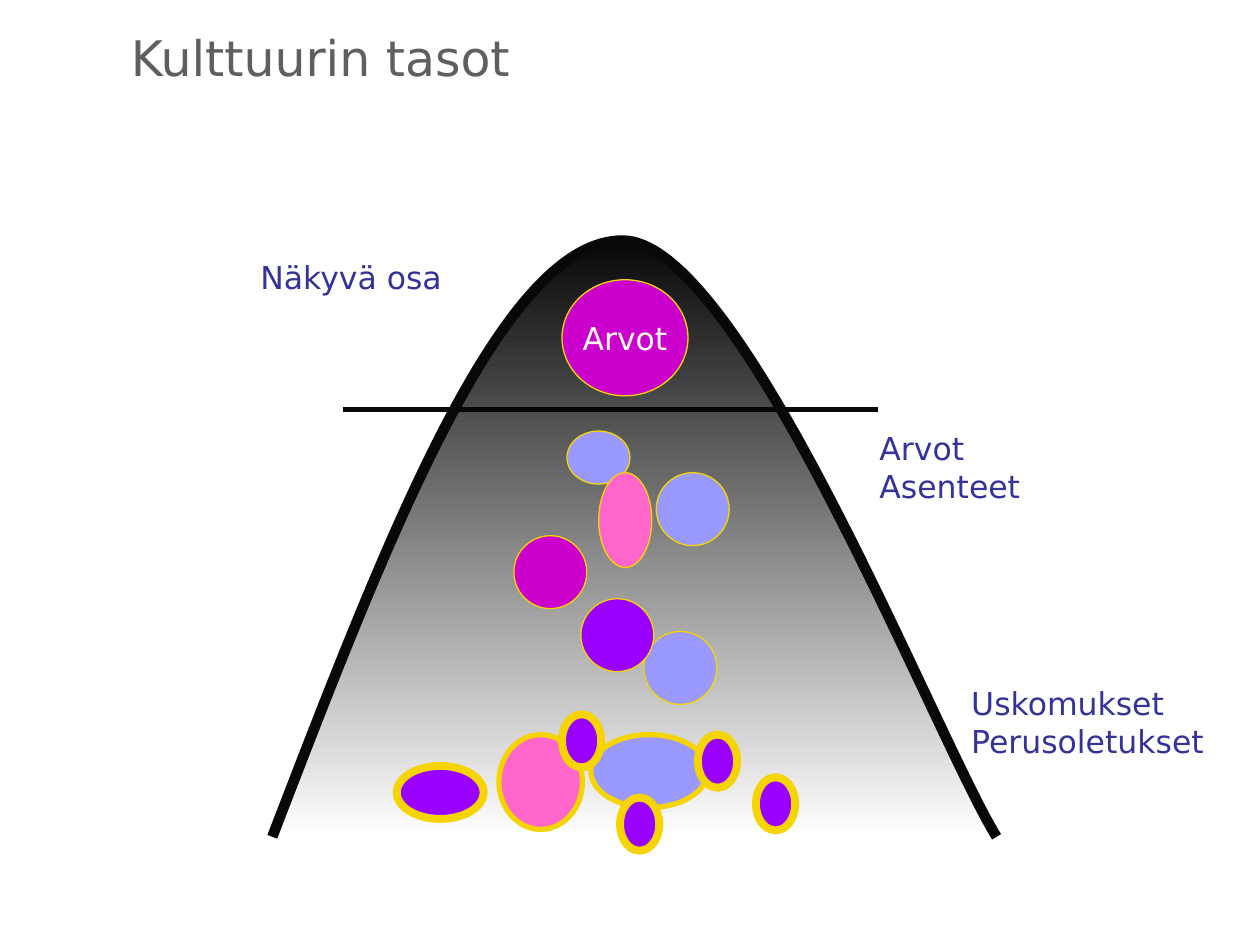
from dataclasses import dataclass
from typing import Any

from lxml.etree import SubElement
from pptx import Presentation
from pptx.dml.color import RGBColor
from pptx.enum.shapes import MSO_CONNECTOR, MSO_SHAPE
from pptx.enum.text import MSO_ANCHOR, PP_ALIGN
from pptx.oxml.ns import qn
from pptx.util import Cm, Pt


@dataclass(frozen=True)
class Theme:
    font: str = "DejaVu Sans"
    title: int = 28
    body: int = 18
    grey: str = "5F5F5F"
    navy: str = "333399"
    black: str = "080808"
    white: str = "FFFFFF"
    gold: str = "F5D400"
    blue: str = "9999FF"
    plum: str = "CC00CC"
    pink: str = "FF66CC"
    violet: str = "9900FF"
    thin: float = 0.75
    mid: float = 3
    thick: float = 4.5
    edge: float = 6


THEME = Theme()


@dataclass(frozen=True)
class Label:
    left: float
    top: float
    width: float
    height: float
    lines: tuple[str, ...]
    size: int = THEME.body
    color: str = THEME.navy
    wrap: bool = False


@dataclass(frozen=True)
class Oval:
    left: float
    top: float
    width: float
    height: float
    fill: str
    line: float = THEME.thin
    text: str = ""


def disc(left: float, top: float, fill: str) -> Oval:
    return Oval(left, top, 1.47, 1.47, fill)


def bead(left: float, top: float, width: float = 0.79) -> Oval:
    return Oval(left, top, width, 1.07, THEME.violet, THEME.thick)


LABELS = (
    Label(2.39, 0.43, 22.33, 3.18, ("Kulttuurin tasot",),
          THEME.title, THEME.grey, True),
    Label(5, 5.08, 4.93, 1.27, ("Näkyvä osa",)),
    Label(17.48, 8.53, 3.86, 2.29, ("Arvot", "Asenteet")),
    Label(19.33, 13.67, 6.63, 2.29, ("Uskomukset Perusoletukset",), wrap=True),
)

OVALS = (
    Oval(11.43, 8.69, 1.27, 1.07, THEME.blue),
    disc(10.36, 10.8, THEME.plum),
    disc(13.23, 9.53, THEME.blue),
    Oval(12.07, 9.53, 1.07, 1.91, THEME.pink),
    disc(12.98, 12.73, THEME.blue),
    disc(11.71, 12.07, THEME.violet),
    Oval(11.91, 14.81, 2.36, 1.47, THEME.blue, THEME.mid),
    Oval(10.06, 14.81, 1.68, 1.91, THEME.pink, THEME.mid),
    bead(15.24, 15.67),
    bead(11.33, 14.4),
    bead(12.5, 16.08),
    bead(14.07, 14.81),
    bead(8, 15.44, 1.75),
    Oval(11.33, 5.64, 2.54, 2.34, THEME.plum, text="Arvot"),
)

# Start point, then two handles and an end point for each curve
MOUND = (
    (5.49, 16.87),
    (7.8, 10.87), (10.11, 4.85), (12.55, 4.85),
    (14.96, 4.85), (18.85, 14.86), (20.09, 16.87),
)


def tint(color: str) -> RGBColor:
    return RGBColor.from_string(color)


def stroke(shape: Any, color: str, width: float) -> None:
    shape.line.color.rgb = tint(color)
    shape.line.width = Pt(width)


def style(para: Any, size: int, color: str) -> None:
    para.font.name = THEME.font
    para.font.size = Pt(size)
    para.font.color.rgb = tint(color)


def add_label(shapes: Any, label: Label) -> None:
    box = shapes.add_textbox(Cm(label.left), Cm(label.top),
                             Cm(label.width), Cm(label.height))
    frame = box.text_frame
    frame.word_wrap = label.wrap
    frame.text = "\n".join(label.lines)
    for para in frame.paragraphs:
        style(para, label.size, label.color)


def add_oval(shapes: Any, oval: Oval) -> None:
    shape = shapes.add_shape(MSO_SHAPE.OVAL, Cm(oval.left), Cm(oval.top),
                             Cm(oval.width), Cm(oval.height))
    shape.shadow.inherit = False
    shape.fill.solid()
    shape.fill.fore_color.rgb = tint(oval.fill)
    stroke(shape, THEME.gold, oval.line)
    if oval.text:
        frame = shape.text_frame
        frame.word_wrap = False
        frame.vertical_anchor = MSO_ANCHOR.MIDDLE
        frame.text = oval.text
        para = frame.paragraphs[0]
        para.alignment = PP_ALIGN.CENTER
        style(para, THEME.body, THEME.white)


def bend(shape: Any) -> None:
    """Turn each three straight segments into one cubic curve."""
    track = next(shape.element.iter(qn("a:path")))
    legs = track.findall(qn("a:lnTo"))
    for start in range(0, len(legs), 3):
        curve = SubElement(track, qn("a:cubicBezTo"))
        for leg in legs[start:start + 3]:
            curve.append(leg[0])
            track.remove(leg)


def add_mound(shapes: Any) -> None:
    first, *rest = [(Cm(x), Cm(y)) for x, y in MOUND]
    pen = shapes.build_freeform(*first)
    pen.add_line_segments(rest, close=False)
    shape = pen.convert_to_shape()
    bend(shape)
    shape.shadow.inherit = False
    shape.fill.gradient()
    shape.fill.gradient_angle = 270
    stops = shape.fill.gradient_stops
    for stop, spot, color in zip(stops, (0, 1), (THEME.black, THEME.white)):
        stop.position = spot
        stop.color.rgb = tint(color)
    stroke(shape, THEME.black, THEME.edge)


def add_level(shapes: Any) -> None:
    line = shapes.add_connector(MSO_CONNECTOR.STRAIGHT,
                                Cm(6.91), Cm(8.26), Cm(17.7), Cm(8.26))
    stroke(line, THEME.black, THEME.mid)
    SubElement(line.element.spPr, qn("a:effectLst"))


def main() -> None:
    deck = Presentation()
    deck.slide_width, deck.slide_height = Cm(25.4), Cm(19.05)
    shapes = deck.slides.add_slide(deck.slide_layouts[6]).shapes
    add_mound(shapes)
    add_level(shapes)
    for label in LABELS:
        add_label(shapes, label)
    for oval in OVALS:
        add_oval(shapes, oval)
    deck.save("out.pptx")


if __name__ == "__main__":
    main()
